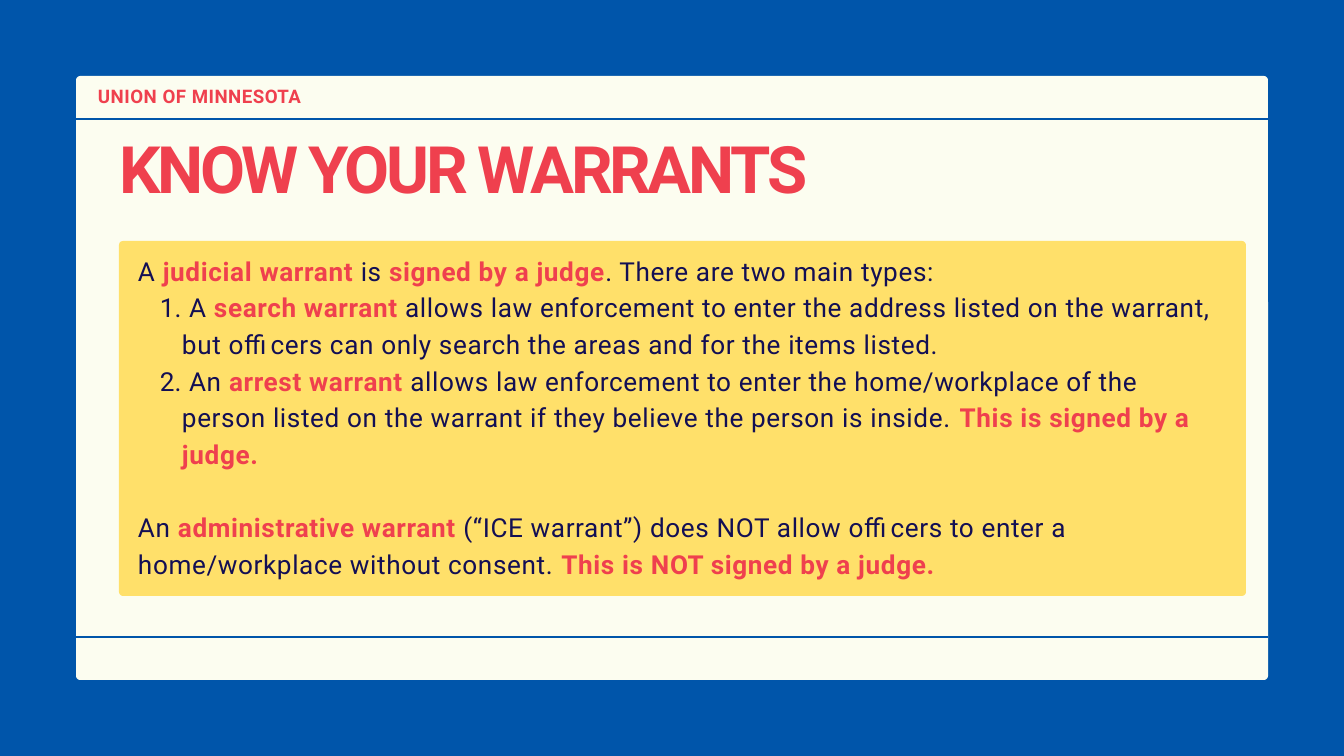
from lxml import etree
from pptx import Presentation
from pptx import util as u
from pptx.dml.color import RGBColor
from pptx.enum import shapes, text
from pptx.oxml import ns

PX = 914400 / 67.2
COLORS = {"blue": "0055AA", "cream": "FCFDF0", "yellow": "FFE06A",
          "red": "EF404E", "navy": "130F54"}

# Words between asterisks are emphasised.
LABEL = "*UNION OF MINNESOTA*"
TITLE = "*KNOW YOUR WARRANTS*"
BODY = [  # text, numbered, points before
    ("A *judicial warrant* is *signed by a judge*. There are two main types:", False, 0),
    (" A *search warrant* allows law enforcement to enter the address listed on the "
     "warrant, but officers can only search the areas and for the items listed.", True, 0),
    (" An *arrest warrant* allows law enforcement to enter the home/workplace of the "
     "person listed on the warrant if they believe the person is inside. "
     "*This is signed by a judge.*", True, 0),
    ("An *administrative warrant* (“ICE warrant”) does NOT allow officers to enter a "
     "home/workplace without consent. *This is NOT signed by a judge.*", False, 39.2),
]
LABEL_STYLE = {"size": 20, "line": 20, "tracking": 50}
TITLE_STYLE = {"size": 70, "line": 63, "tracking": -350}
BODY_STYLE = {"size": 28, "line": 39.2, "tracking": 70}

PANEL = (76, 76, 1192, 604)
CARD = (119, 241, 1127, 355)
LABEL_AREA = (98, 89, 317, 21)
TITLE_AREA = (119, 148, 1068, 70)
BODY_AREA = (138, 250, 1088, 366)
RULES = (119, 637)
CORNER = 4
HANG = 22


def px(value):
    return u.Emu(round(value * PX))


def color(name):
    return RGBColor.from_string(COLORS[name])


def add_panel(page, area, fill):
    panel = page.shapes.add_shape(shapes.MSO_SHAPE.ROUNDED_RECTANGLE, *map(px, area))
    panel.adjustments[0] = CORNER / min(area[2:])
    panel.shadow.inherit = False
    panel.fill.solid()
    panel.fill.fore_color.rgb = color(fill)
    panel.line.fill.background()


def add_rule(page, y):
    left, _, width, _ = PANEL
    rule = page.shapes.add_connector(
        shapes.MSO_CONNECTOR.STRAIGHT, px(left), px(y), px(left + width), px(y))
    rule.line.color.rgb = color("blue")
    rule.line.width = u.Pt(2.25)
    etree.SubElement(rule._element.spPr, ns.qn("a:effectLst"))


def set_list_format(para, numbered):
    properties = para._p.get_or_add_pPr()
    properties.set("marL", str(px(2 * HANG if numbered else 0)))
    properties.set("indent", str(px(-HANG if numbered else 0)))
    if numbered:
        etree.SubElement(properties, ns.qn("a:buFont"), typeface="+mj-lt")
        etree.SubElement(properties, ns.qn("a:buAutoNum"), type="arabicPeriod")
    else:
        etree.SubElement(properties, ns.qn("a:buNone"))


def write(box, area, paragraphs, style):
    """Place a text holder in front of the panels and fill it."""
    box.left, box.top, box.width, box.height = map(px, area)
    box._element.getparent().append(box._element)
    frame = box.text_frame
    settings = {"margin_left": 0, "margin_top": 0, "margin_right": 0, "margin_bottom": 0,
                "word_wrap": True, "auto_size": text.MSO_AUTO_SIZE.NONE,
                "vertical_anchor": text.MSO_ANCHOR.TOP}
    for name, value in settings.items():
        setattr(frame, name, value)

    for index, (words, numbered, before) in enumerate(paragraphs):
        para = frame.add_paragraph() if index else frame.paragraphs[0]
        set_list_format(para, numbered)
        layout = {"alignment": text.PP_ALIGN.LEFT, "line_spacing": u.Pt(style["line"]),
                  "space_before": u.Pt(before), "space_after": u.Pt(0)}
        for name, value in layout.items():
            setattr(para, name, value)
        for part, piece in enumerate(words.split("*")):
            if not piece:
                continue
            strong = part % 2 == 1
            span = para.add_run()
            span.text = piece
            font = {"name": "Roboto", "size": u.Pt(style["size"]), "bold": strong}
            for name, value in font.items():
                setattr(span.font, name, value)
            span.font.color.rgb = color("red" if strong else "navy")
            span.font._element.set("spc", str(style["tracking"]))


def main():
    deck = Presentation()
    deck.slide_width, deck.slide_height = px(1344), px(756)
    page = deck.slides.add_slide(deck.slide_layouts[1])
    page.background.fill.solid()
    page.background.fill.fore_color.rgb = color("blue")

    add_panel(page, PANEL, "cream")
    for y in RULES:
        add_rule(page, y)
    add_panel(page, CARD, "yellow")

    write(page.shapes.title, TITLE_AREA, [(TITLE, False, 0)], TITLE_STYLE)
    write(page.placeholders[1], BODY_AREA, BODY, BODY_STYLE)
    label = page.shapes.add_textbox(*map(px, LABEL_AREA))
    write(label, LABEL_AREA, [(LABEL, False, 0)], LABEL_STYLE)
    deck.save("out.pptx")


if __name__ == "__main__":
    main()
